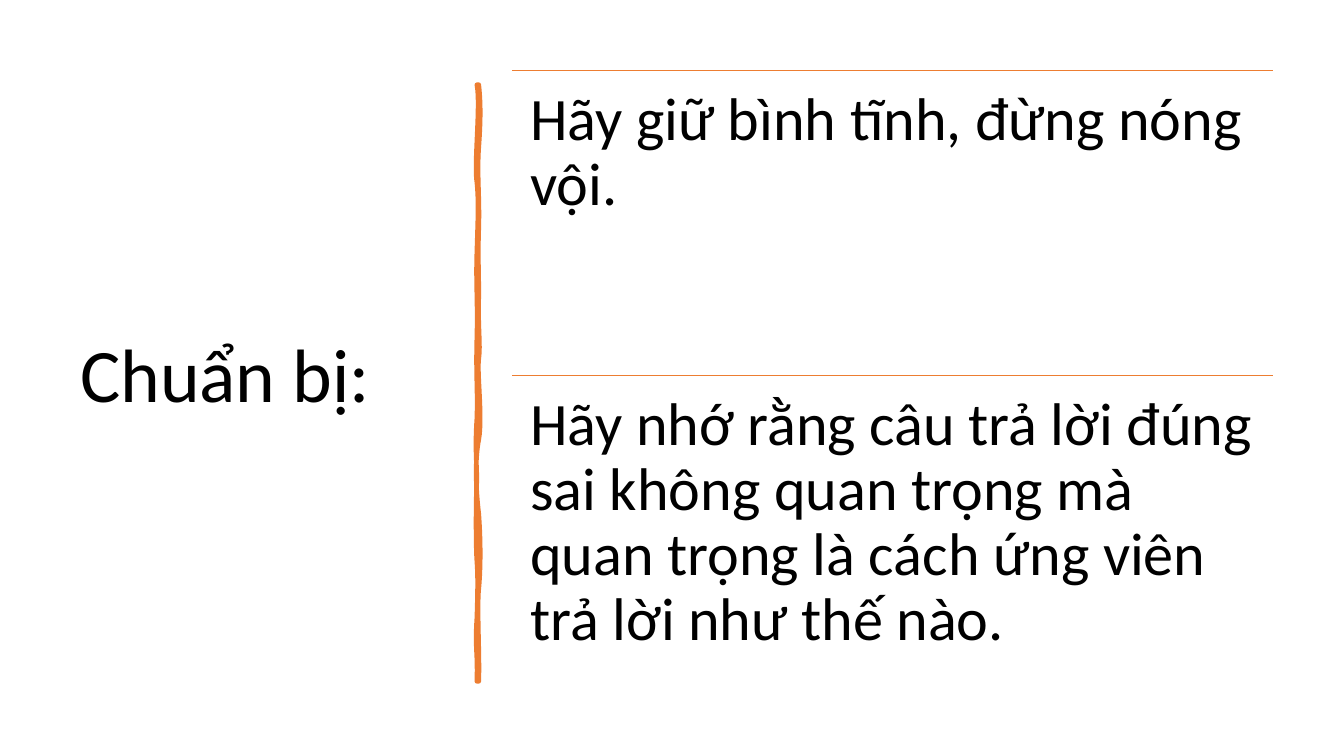
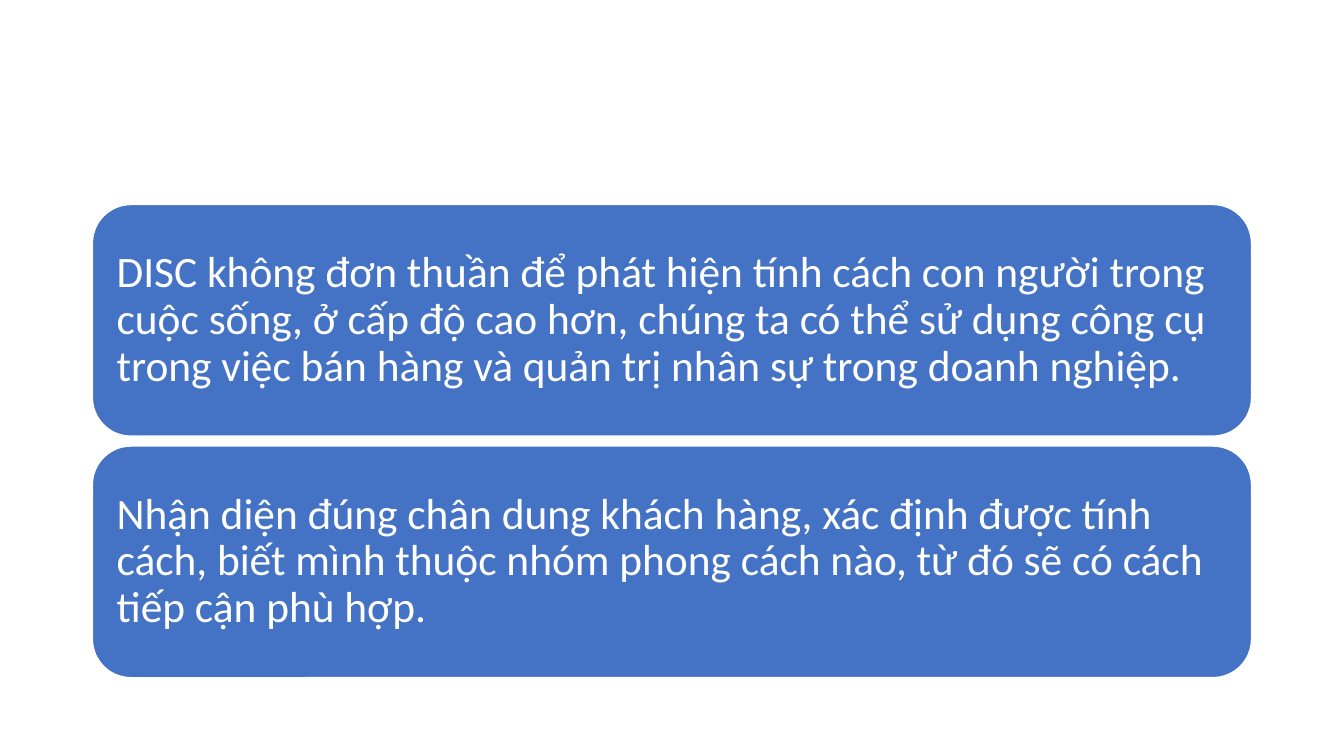
from lxml import etree
from pptx import Presentation
from pptx.dml.color import RGBColor
from pptx.enum import shapes, text
from pptx.oxml.ns import qn
from pptx.util import Pt

COLORS = {"ink": "000000", "paper": "FFFFFF", "accent": "ED7D31", "card": "4472C4"}
FONT = "Calibri"

TITLE = "Chuẩn bị:"
TIPS = [
    "Hãy giữ bình tĩnh, đừng nóng vội.",
    "Hãy nhớ rằng câu trả lời đúng sai không quan trọng mà quan trọng là "
    "cách ứng viên trả lời như thế nào.",
]
CARDS = [
    "DISC không đơn thuần để phát hiện tính cách con người trong cuộc sống, "
    "ở cấp độ cao hơn, chúng ta có thể sử dụng công cụ trong việc bán hàng "
    "và quản trị nhân sự trong doanh nghiệp.",
    "Nhận diện đúng chân dung khách hàng, xác định được tính cách, biết mình "
    "thuộc nhóm phong cách nào, từ đó sẽ có cách tiếp cận phù hợp.",
]

# Hand-drawn bar: a start point, then Bezier segments (two controls, one end).
BAR_START = (342, 60.5)
BAR_CURVES = [
    ((343.4, 73.4), (343.4, 85.7), (342, 105.1)),
    ((340.6, 124.6), (342.7, 140.4), (342, 162.7)),
    ((341.3, 185), (342, 188.6), (342, 211.7)),
    ((341.3, 234), (343.4, 246.2), (342, 256.3)),
    ((340.6, 266.4), (344.9, 298.1), (342, 313.9)),
    ((339.1, 329), (339.8, 348.5), (342, 367.2)),
    ((343.4, 385.9), (343.4, 406.1), (342, 420.5)),
    ((340.6, 434.2), (342.7, 468), (342, 486.7)),
    ((341.3, 486.7), (340.6, 486.7), (340.6, 486.7)),
    ((341.3, 465.1), (339.1, 463.7), (340.6, 441.4)),
    ((341.3, 419.8), (341.3, 410.4), (340.6, 401)),
    ((339.8, 391.7), (339.8, 356.4), (340.6, 343.4)),
    ((340.6, 330.5), (339.1, 320.4), (340.6, 298.8)),
    ((341.3, 277.9), (339.8, 268.6), (340.6, 241.2)),
    ((341.3, 214.6), (339.8, 202.3), (340.6, 180)),
    ((341.3, 157), (342, 144), (340.6, 130.3)),
    ((338.4, 117.4), (343.4, 74.9), (340.6, 60.5)),
]

TIP_LEFT, TIP_TOP, TIP_WIDTH, TIP_HEIGHT = 365.8, 50.3, 543.6, 217.9
CARD_LEFT, CARD_TOP, CARD_WIDTH, CARD_HEIGHT, CARD_GAP = 66, 146.1, 828, 165.5, 7


def rgb(name):
    return RGBColor.from_string(COLORS[name])


def write(shape, content, size, color, anchor, inset=None):
    tf = shape.text_frame
    tf.text = content
    tf.word_wrap = True
    tf.auto_size = text.MSO_AUTO_SIZE.NONE
    tf.vertical_anchor = anchor
    if inset is not None:
        tf.margin_left = tf.margin_right = Pt(inset)
        tf.margin_top = tf.margin_bottom = Pt(inset)
    p = tf.paragraphs[0]
    p.alignment = text.PP_ALIGN.LEFT
    p.line_spacing = 0.9
    p.font.name, p.font.size = FONT, Pt(size)
    p.font.color.rgb = rgb(color)


def paint(shape, fill, line, width):
    shape.shadow.inherit = False
    shape.fill.solid()
    shape.fill.fore_color.rgb = rgb(fill)
    shape.line.color.rgb = rgb(line)
    shape.line.width = Pt(width)


def add_rule(s, left, top, width):
    rule = s.shapes.add_connector(shapes.MSO_CONNECTOR.STRAIGHT,
                                  Pt(left), Pt(top), Pt(left + width), Pt(top))
    rule.line.color.rgb = rgb("accent")
    rule.line.width = Pt(1)
    etree.SubElement(rule._element.spPr, qn("a:effectLst"))


def bend(shape, curves):
    """Turn the straight segments of a freeform into Bezier curves."""
    segments = list(shape._element.iter(qn("a:lnTo")))
    for segment, curve in zip(segments, curves):
        bezier = etree.Element(qn("a:cubicBezTo"))
        for x, y in curve:
            etree.SubElement(bezier, qn("a:pt"), x=str(Pt(x) - shape.left),
                             y=str(Pt(y) - shape.top))
        segment.getparent().replace(segment, bezier)


def add_bar(s):
    builder = s.shapes.build_freeform(Pt(BAR_START[0]), Pt(BAR_START[1]))
    ends = [(Pt(x), Pt(y)) for _, _, (x, y) in BAR_CURVES]
    builder.add_line_segments(ends, close=True)
    bar = builder.convert_to_shape()
    bend(bar, BAR_CURVES)
    paint(bar, "accent", "accent", 3.25)
    etree.SubElement(bar.line._get_or_add_ln(), qn("a:round"))


def build_preparation(prs):
    s = prs.slides.add_slide(prs.slide_layouts[5])
    title = s.shapes.title
    title.left, title.top, title.width, title.height = map(Pt, (50, 50, 269.3, 440))
    write(title, TITLE, 54, "ink", text.MSO_ANCHOR.MIDDLE)
    add_bar(s)
    for i, tip in enumerate(TIPS):
        top = TIP_TOP + i * TIP_HEIGHT
        add_rule(s, TIP_LEFT, top, TIP_WIDTH)
        box = s.shapes.add_textbox(Pt(TIP_LEFT), Pt(top), Pt(TIP_WIDTH), Pt(TIP_HEIGHT))
        write(box, tip, 43, "ink", text.MSO_ANCHOR.TOP, 12.9)


def build_applications(prs):
    s = prs.slides.add_slide(prs.slide_layouts[6])
    for i, content in enumerate(CARDS):
        top = CARD_TOP + i * (CARD_HEIGHT + CARD_GAP)
        card = s.shapes.add_shape(shapes.MSO_SHAPE.ROUNDED_RECTANGLE, Pt(CARD_LEFT),
                                  Pt(top), Pt(CARD_WIDTH), Pt(CARD_HEIGHT))
        paint(card, "card", "paper", 1)
        write(card, content, 31, "paper", text.MSO_ANCHOR.MIDDLE, 9.3)


def main():
    prs = Presentation()
    prs.slide_width, prs.slide_height = Pt(960), Pt(540)
    build_preparation(prs)
    build_applications(prs)
    prs.save("out.pptx")


if __name__ == "__main__":
    main()
